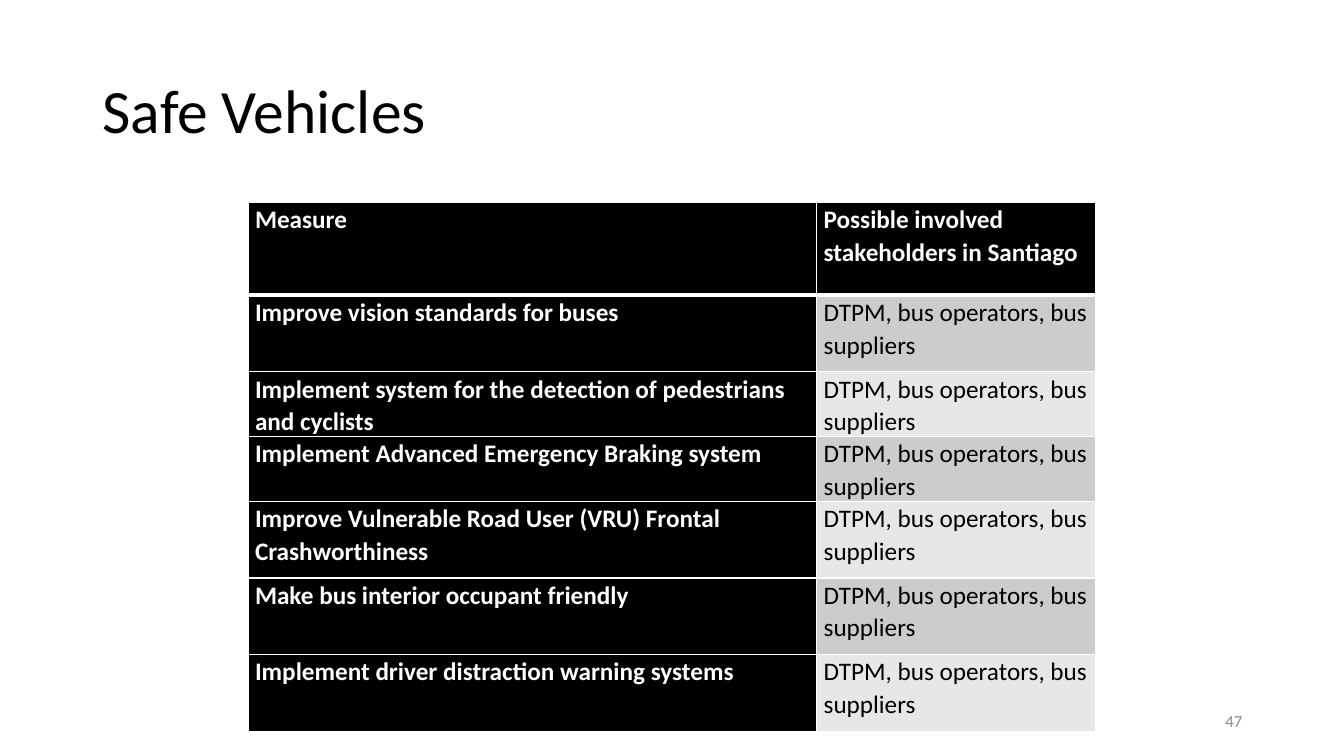
from lxml.etree import SubElement
from pptx import Presentation
from pptx.dml.color import RGBColor
from pptx.enum.text import MSO_ANCHOR, PP_ALIGN
from pptx.oxml.ns import qn
from pptx.util import Inches, Pt

STAKEHOLDERS = "DTPM, bus operators, bus suppliers"
HEADINGS = ("Measure", "Possible involved stakeholders in Santiago")
MEASURES = (
    "Improve vision standards for buses",
    "Implement system for the detection of pedestrians and cyclists",
    "Implement Advanced Emergency Braking system",
    "Improve Vulnerable Road User (VRU) Frontal Crashworthiness",
    "Make bus interior occupant friendly",
    "Implement driver distraction warning systems",
)
COLUMN_WIDTHS = (5.64, 2.77)
ROW_HEIGHTS = (0.92, 0.76, 0.5, 0.5, 0.76, 0.76, 0.76)
BLACK, WHITE, GREY = "000000", "FFFFFF", "8C8C8C"
BANDS = ("CCCCCC", "E7E7E7")


def color(hex_code):
    return RGBColor.from_string(hex_code)


def style_font(paragraph, size, hex_code, bold=False):
    for run in paragraph.runs:
        run.font.name = "Calibri"
        run.font.size = Pt(size)
        run.font.bold = bold
        run.font.color.rgb = color(hex_code)


def add_label(slide, text, box, size, hex_code, align=PP_ALIGN.LEFT, spacing=1.0):
    frame = slide.shapes.add_textbox(*map(Inches, box)).text_frame
    frame.word_wrap = True
    frame.vertical_anchor = MSO_ANCHOR.MIDDLE
    frame.text = text
    paragraph = frame.paragraphs[0]
    paragraph.alignment = align
    paragraph.line_spacing = spacing
    style_font(paragraph, size, hex_code)


def add_borders(cell, top, bottom):
    """Draw white cell borders; call before filling, as the schema puts lines first."""
    properties = cell._tc.get_or_add_tcPr()
    for side, width in (("L", 1), ("R", 1), ("T", top), ("B", bottom)):
        line = SubElement(properties, qn(f"a:ln{side}"), w=str(Pt(width)))
        solid = SubElement(line, qn("a:solidFill"))
        SubElement(solid, qn("a:srgbClr"), val=WHITE)


def fill_cell(cell, text, row, column):
    dark = row == 0 or column == 0
    add_borders(cell, top=3 if row == 1 else 1, bottom=3 if row == 0 else 1)
    cell.fill.solid()
    cell.fill.fore_color.rgb = color(BLACK if dark else BANDS[(row - 1) % 2])
    cell.margin_left = cell.margin_right = Inches(0.07)
    cell.margin_top = cell.margin_bottom = 0
    cell.text_frame.text = text
    paragraph = cell.text_frame.paragraphs[0]
    paragraph.line_spacing = 1.07
    paragraph.space_after = Pt(8)
    style_font(paragraph, 18, WHITE if dark else BLACK, bold=dark)


def add_measures_table(slide):
    rows = [HEADINGS] + [(measure, STAKEHOLDERS) for measure in MEASURES]
    table = slide.shapes.add_table(
        len(rows), len(HEADINGS), Inches(2.46), Inches(2.01),
        Inches(sum(COLUMN_WIDTHS)), Inches(sum(ROW_HEIGHTS))).table
    for column, width in zip(table.columns, COLUMN_WIDTHS):
        column.width = Inches(width)
    for row, height in zip(table.rows, ROW_HEIGHTS):
        row.height = Inches(height)
    for r, texts in enumerate(rows):
        for c, text in enumerate(texts):
            fill_cell(table.cell(r, c), text, r, c)


def main():
    deck = Presentation()
    deck.slide_width, deck.slide_height = Inches(13.33), Inches(7.5)
    slide = deck.slides.add_slide(deck.slide_layouts[6])
    add_label(slide, "Safe Vehicles", (0.92, 0.4, 11.5, 1.45), 44, BLACK, spacing=0.9)
    add_measures_table(slide)
    add_label(slide, "47", (9.42, 6.95, 3, 0.4), 12, GREY, align=PP_ALIGN.RIGHT)
    deck.save("out.pptx")


if __name__ == "__main__":
    main()
